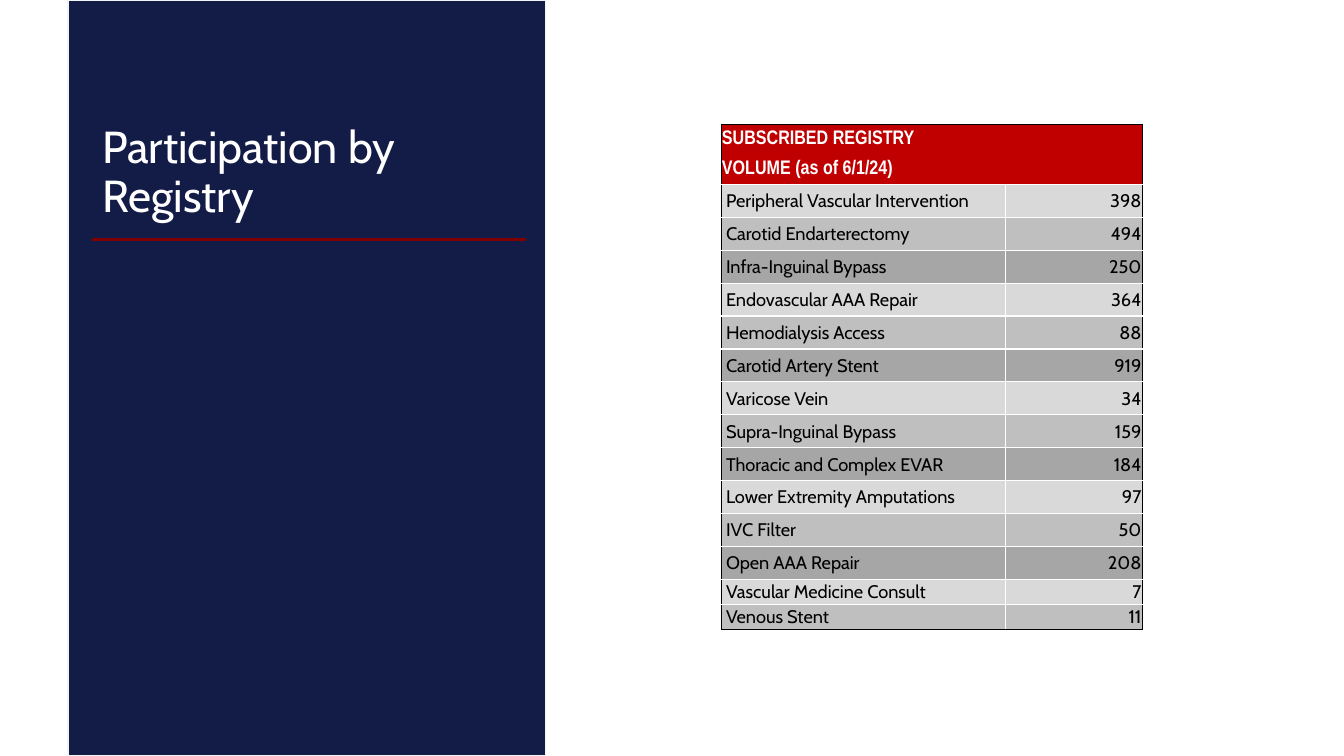
from dataclasses import dataclass

from lxml.etree import SubElement
from pptx import Presentation
from pptx.dml.color import RGBColor
from pptx.enum.shapes import MSO_CONNECTOR as Connector, MSO_SHAPE as Shape
from pptx.enum.text import MSO_ANCHOR as Anchor, PP_ALIGN as Align
from pptx.oxml.ns import qn
from pptx.util import Pt


@dataclass(frozen=True)
class Theme:
    navy: str = "131C47"
    pale: str = "F1F5F8"
    maroon: str = "800000"
    red: str = "C00000"
    white: str = "FFFFFF"
    black: str = "000000"
    bands: tuple = ("D9D9D9", "BFBFBF", "A6A6A6")
    body_font: str = "Cabin"
    header_font: str = "Arial Narrow"
    title_size: float = 32
    header_size: float = 14
    body_size: float = 13


THEME = Theme()
HEADER = ("SUBSCRIBED REGISTRY", "VOLUME (as of 6/1/24)")
VOLUMES = (
    ("Peripheral Vascular Intervention", 398),
    ("Carotid Endarterectomy", 494),
    ("Infra-Inguinal Bypass", 250),
    ("Endovascular AAA Repair", 364),
    ("Hemodialysis Access", 88),
    ("Carotid Artery Stent", 919),
    ("Varicose Vein", 34),
    ("Supra-Inguinal Bypass", 159),
    ("Thoracic and Complex EVAR", 184),
    ("Lower Extremity Amputations", 97),
    ("IVC Filter", 50),
    ("Open AAA Repair", 208),
    ("Vascular Medicine Consult", 7),
    ("Venous Stent", 11),
)
ROW_HEIGHTS = [20.4, 21] + [23.5] * 12 + [18, 17.5]
COLUMN_WIDTHS = [203, 98]
OUTER = (THEME.black, 0.5)
INNER = (THEME.white, 1)
HEADER_RULE = (THEME.white, 0.5)


def color(value):
    return RGBColor.from_string(value)


def add_span(para, text, font, size, ink, bold=False):
    span = para.add_run()
    span.text = text
    span.font.name = font
    span.font.size = Pt(size)
    span.font.bold = bold
    span.font.color.rgb = color(ink)


def add_panel(page, left, top, width, height):
    panel = page.shapes.add_shape(Shape.RECTANGLE, Pt(left), Pt(top), Pt(width), Pt(height))
    panel.shadow.inherit = False
    panel.fill.solid()
    panel.fill.fore_color.rgb = color(THEME.navy)
    panel.line.color.rgb = color(THEME.pale)
    panel.line.width = Pt(1)


def add_rule(page, left, right, height):
    rule = page.shapes.add_connector(Connector.STRAIGHT, Pt(left), Pt(height), Pt(right), Pt(height))
    rule.line.color.rgb = color(THEME.maroon)
    rule.line.width = Pt(1.75)
    SubElement(rule._element.spPr, qn("a:effectLst"))


def add_title(page, text, left, top, width, height):
    box = page.shapes.add_textbox(Pt(left), Pt(top), Pt(width), Pt(height))
    frame = box.text_frame
    frame.word_wrap = True
    frame.vertical_anchor = Anchor.BOTTOM
    para = frame.paragraphs[0]
    para.line_spacing = 0.9
    add_span(para, text, THEME.body_font, THEME.title_size, THEME.white)


def set_borders(cell, left, right, top, bottom):
    properties = cell._tc.get_or_add_tcPr()
    for tag, border in zip(("lnL", "lnR", "lnT", "lnB"), (left, right, top, bottom)):
        line = SubElement(properties, qn(f"a:{tag}"))
        if border is None:
            SubElement(line, qn("a:noFill"))
            continue
        ink, width = border
        line.set("w", str(Pt(width)))
        fill = SubElement(line, qn("a:solidFill"))
        SubElement(fill, qn("a:srgbClr"), val=ink)


def style_cell(cell, fill, borders, indent=0.72):
    set_borders(cell, *borders)
    cell.fill.solid()
    cell.fill.fore_color.rgb = color(fill)
    cell.vertical_anchor = Anchor.MIDDLE
    cell.margin_left = Pt(indent)
    cell.margin_right = cell.margin_top = Pt(0.72)
    cell.margin_bottom = Pt(0)


def fill_header(table):
    table.cell(0, 1).merge(table.cell(1, 1))
    for row, text in enumerate(HEADER):
        top, bottom = (OUTER, None) if row == 0 else (None, HEADER_RULE)
        label, blank = table.cell(row, 0), table.cell(row, 1)
        style_cell(label, THEME.red, (OUTER, None, top, bottom))
        style_cell(blank, THEME.red, (None, OUTER, top, HEADER_RULE))
        add_span(label.text_frame.paragraphs[0], text, THEME.header_font,
                 THEME.header_size, THEME.white, bold=True)


def fill_body(table):
    for index, (name, volume) in enumerate(VOLUMES):
        row = index + len(HEADER)
        fill = THEME.bands[index % len(THEME.bands)]
        top = HEADER_RULE if index == 0 else INNER
        bottom = OUTER if index == len(VOLUMES) - 1 else INNER
        label, value = table.cell(row, 0), table.cell(row, 1)
        style_cell(label, fill, (OUTER, INNER, top, bottom), indent=3.6)
        style_cell(value, fill, (INNER, OUTER, top, bottom))
        value.text_frame.paragraphs[0].alignment = Align.RIGHT
        for cell, text in ((label, name), (value, str(volume))):
            add_span(cell.text_frame.paragraphs[0], text, THEME.body_font,
                     THEME.body_size, THEME.black)


def add_volume_table(page, left, top):
    frame = page.shapes.add_table(len(ROW_HEIGHTS), len(COLUMN_WIDTHS), Pt(left), Pt(top),
                                  Pt(sum(COLUMN_WIDTHS)), Pt(sum(ROW_HEIGHTS)))
    table = frame.table
    table.first_row = table.horz_banding = False
    for column, width in zip(table.columns, COLUMN_WIDTHS):
        column.width = Pt(width)
    for row, height in zip(table.rows, ROW_HEIGHTS):
        row.height = Pt(height)
    fill_header(table)
    fill_body(table)


def main():
    deck = Presentation()
    deck.slide_width, deck.slide_height = Pt(960), Pt(540)
    page = deck.slides.add_slide(deck.slide_layouts[6])
    add_panel(page, 48.5, 0, 341, 540)
    add_rule(page, 66, 376, 171)
    add_title(page, "Participation by Registry", 66, 36, 310, 126)
    add_volume_table(page, 515, 89)
    deck.save("out.pptx")


if __name__ == "__main__":
    main()
